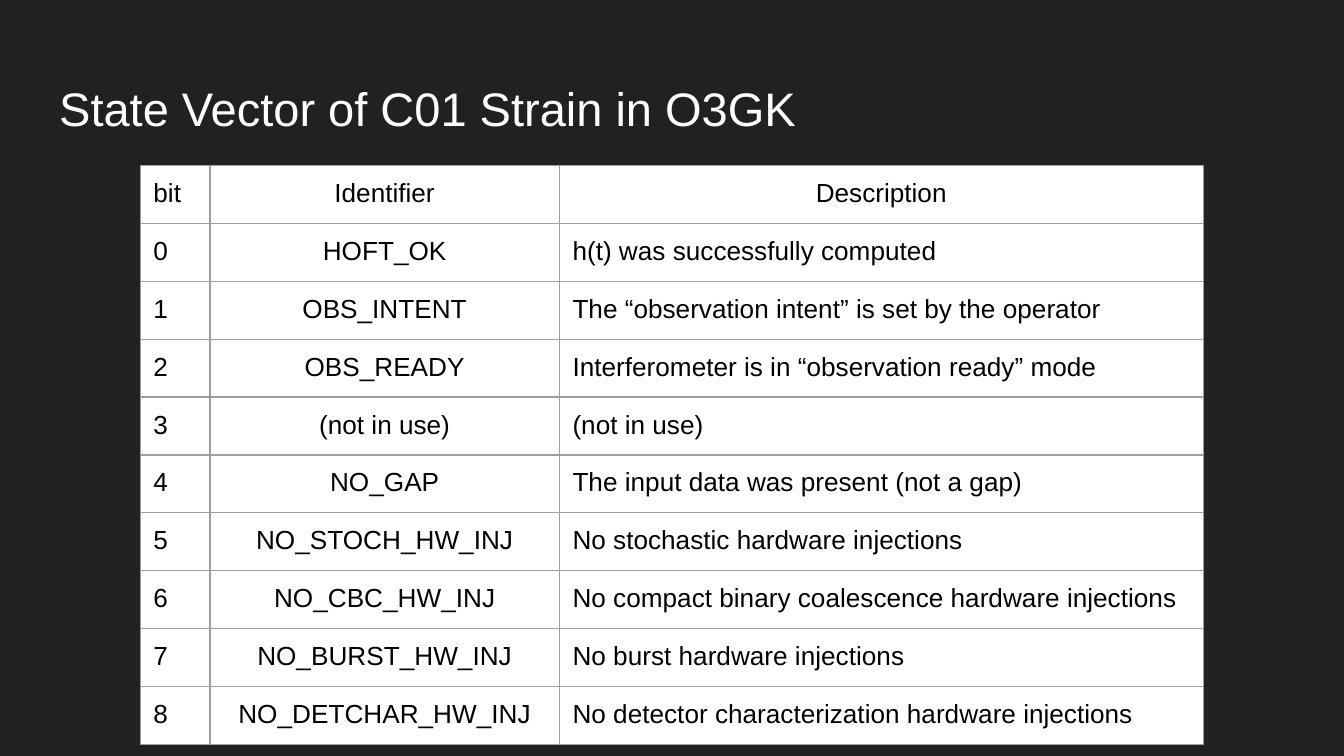
from lxml.etree import SubElement
from pptx import Presentation
from pptx.dml.color import RGBColor
from pptx.enum.text import MSO_ANCHOR as Anchor, PP_ALIGN as Align
from pptx.oxml.ns import qn
from pptx.util import Cm, Pt

TITLE = "State Vector of C01 Strain in O3GK"
HEADER = ("bit", "Identifier", "Description")
BITS = [
    ("HOFT_OK", "h(t) was successfully computed"),
    ("OBS_INTENT", "The “observation intent” is set by the operator"),
    ("OBS_READY", "Interferometer is in “observation ready” mode"),
    ("(not in use)", "(not in use)"),
    ("NO_GAP", "The input data was present (not a gap)"),
    ("NO_STOCH_HW_INJ", "No stochastic hardware injections"),
    ("NO_CBC_HW_INJ", "No compact binary coalescence hardware injections"),
    ("NO_BURST_HW_INJ", "No burst hardware injections"),
    ("NO_DETCHAR_HW_INJ", "No detector characterization hardware injections"),
]
ROWS = [HEADER] + [(str(bit), *texts) for bit, texts in enumerate(BITS)]

FONT = "Arial"
BACKGROUND, WHITE, BLACK, GRID = "212121", "FFFFFF", "000000", "9E9E9E"
COLUMN_WIDTHS = (1.32, 6.6, 12.17)
ROW_HEIGHT = 1.06
INSET = Cm(0.25)


def paint(fill, color):
    fill.solid()
    fill.fore_color.rgb = RGBColor.from_string(color)


def write(paragraph, text, size, color, align=Align.LEFT):
    paragraph.text = text
    paragraph.alignment = align
    font = paragraph.runs[0].font
    font.name, font.size = FONT, Pt(size)
    font.color.rgb = RGBColor.from_string(color)


def set_insets(holder):
    holder.margin_left = holder.margin_right = INSET
    holder.margin_top = holder.margin_bottom = INSET


def add_borders(cell):
    properties = cell._tc.get_or_add_tcPr()
    for side in ("a:lnL", "a:lnR", "a:lnT", "a:lnB"):
        line = SubElement(properties, qn(side), w=str(Pt(0.75)))
        fill = SubElement(line, qn("a:solidFill"))
        SubElement(fill, qn("a:srgbClr"), val=GRID)


deck = Presentation()
deck.slide_width, deck.slide_height = Cm(25.4), Cm(14.29)
page = deck.slides.add_slide(deck.slide_layouts[6])
paint(page.background.fill, BACKGROUND)

title_box = page.shapes.add_textbox(Cm(0.87), Cm(1.24), Cm(23.67), Cm(1.6))
frame = title_box.text_frame
frame.word_wrap = True
frame.vertical_anchor = Anchor.MIDDLE
set_insets(frame)
write(frame.paragraphs[0], TITLE, 25.2, WHITE)

table = page.shapes.add_table(
    len(ROWS), len(HEADER), Cm(2.65), Cm(3.13),
    Cm(sum(COLUMN_WIDTHS)), Cm(ROW_HEIGHT * len(ROWS)),
).table
table.first_row = table.horz_banding = False
for column, width in zip(table.columns, COLUMN_WIDTHS):
    column.width = Cm(width)

for row_index, texts in enumerate(ROWS):
    table.rows[row_index].height = Cm(ROW_HEIGHT)
    for column_index, text in enumerate(texts):
        cell = table.cell(row_index, column_index)
        centred = column_index == 1 or (row_index == 0 and column_index == 2)
        align = Align.CENTER if centred else Align.LEFT
        write(cell.text_frame.paragraphs[0], text, 14, BLACK, align)
        set_insets(cell)
        add_borders(cell)
        paint(cell.fill, WHITE)

deck.save("out.pptx")
